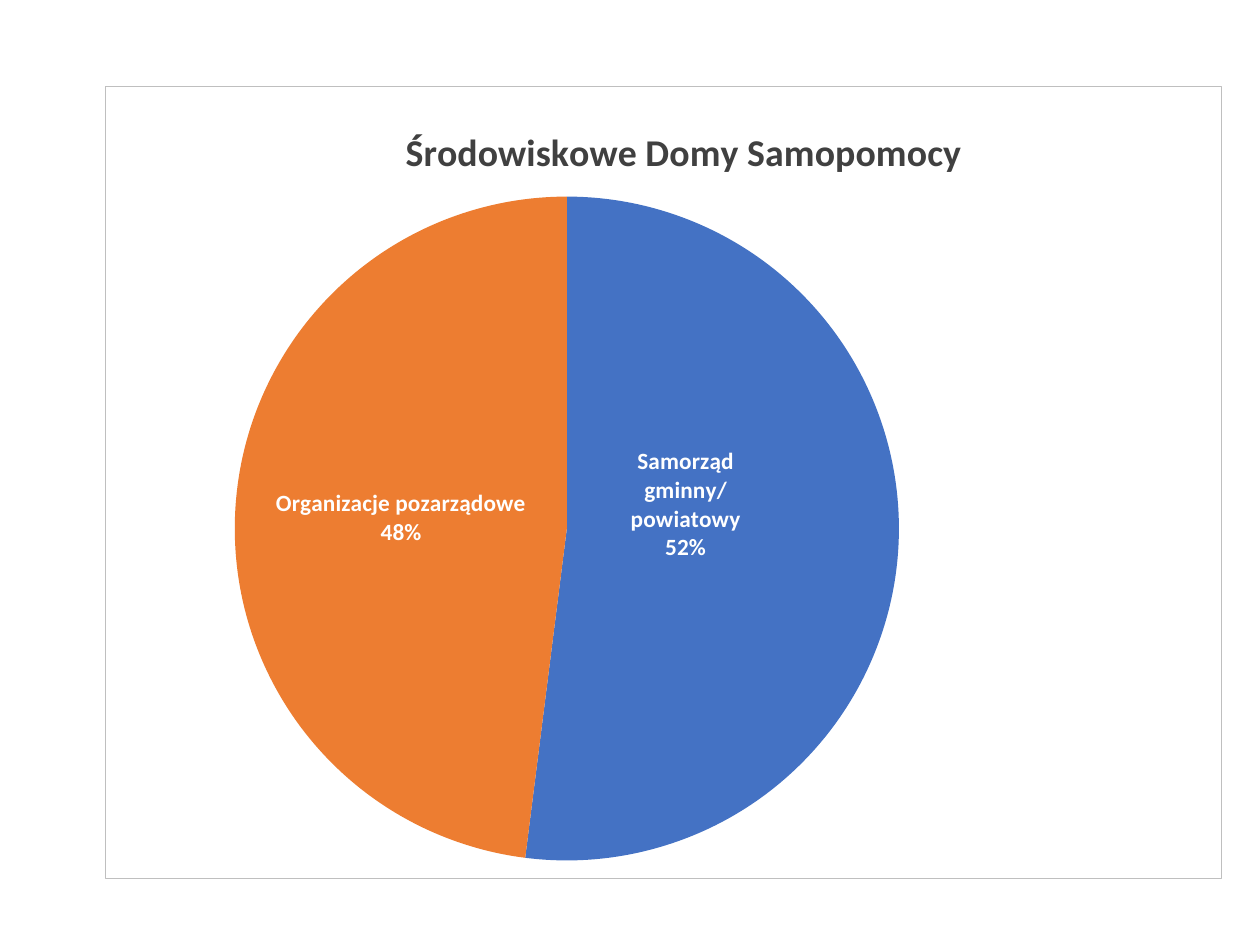
from dataclasses import dataclass

from lxml import etree
from pptx import Presentation
from pptx import util as u
from pptx.chart import data as chart_data
from pptx.dml import color
from pptx.enum import chart as chart_enum
from pptx.oxml import parse_xml
from pptx.oxml.ns import nsdecls, qn


@dataclass(frozen=True)
class Theme:
    font: str = "Calibri"
    title: str = "404040"
    label: str = "FFFFFF"
    text: str = "000000"
    border: str = "BFBFBF"
    title_size: float = 21.6
    label_size: float = 13.3
    base_size: float = 10


@dataclass(frozen=True)
class Sector:
    name: str
    percent: int
    fill: str


THEME = Theme()
SECTORS = [
    Sector("Samorząd gminny/powiatowy", 52, "4472C4"),
    Sector("Organizacje pozarządowe", 48, "ED7D31"),
]


def format_font(font, *, size: float, fill: str, bold: bool = False) -> None:
    font.name = THEME.font
    font.size = u.Pt(size)
    font.bold = bold
    font.color.rgb = color.RGBColor.from_string(fill)


def write_text(frame, content: str, **font_format) -> None:
    paragraph = frame.paragraphs[0]
    run = paragraph.add_run()
    run.text = content
    format_font(run.font, **font_format)


def place(parent, after: str | None, *, target: str = "", edge: bool = True, **values: float) -> None:
    for old in parent.findall(qn("c:layout")):
        parent.remove(old)
    layout = etree.Element(qn("c:layout"))
    manual = etree.SubElement(layout, qn("c:manualLayout"))
    settings = {"layoutTarget": target} if target else {}
    if edge:
        settings |= {"xMode": "edge", "yMode": "edge"}
    for name, value in (settings | values).items():
        etree.SubElement(manual, qn(f"c:{name}")).set("val", str(value))
    if after:
        parent.find(qn(after)).addnext(layout)
    else:
        parent.insert(0, layout)


def add_border(chart) -> None:
    border = parse_xml(
        f'<c:spPr {nsdecls("c", "a")}><a:solidFill><a:srgbClr val="FFFFFF"/></a:solidFill>'
        f'<a:ln w="{u.Pt(0.75)}"><a:solidFill><a:srgbClr val="{THEME.border}"/>'
        "</a:solidFill></a:ln></c:spPr>"
    )
    chart.element.find(qn("c:chart")).addnext(border)


def format_labels(plot) -> None:
    labels = plot.series[0].data_labels
    labels.show_value = False
    labels.show_category_name = True
    labels.show_percentage = True
    labels.position = chart_enum.XL_LABEL_POSITION.CENTER
    format_font(labels.font, size=THEME.label_size, fill=THEME.label, bold=True)


def shift_first_label(series) -> None:
    label = series.points[0].data_label
    label.position = chart_enum.XL_LABEL_POSITION.CENTER
    format_font(label.font, size=THEME.label_size, fill=THEME.label, bold=True)
    element = series.data_labels._element.find(qn("c:dLbl"))
    for name, value in (("showVal", "0"), ("showCatName", "1"), ("showPercent", "1")):
        element.find(qn(f"c:{name}")).set("val", value)
    place(element, "c:idx", edge=False, x=-0.042, y=-0.043)


def add_sector_pie(slide, sectors: list[Sector], title: str) -> None:
    values = chart_data.CategoryChartData()
    values.categories = [sector.name for sector in sectors]
    values.add_series("Series 1", [sector.percent for sector in sectors])
    chart = slide.shapes.add_chart(
        chart_enum.XL_CHART_TYPE.PIE,
        u.Cm(2.11), u.Cm(1.73), u.Cm(22.53), u.Cm(16), values,
    ).chart
    chart.has_legend = False
    format_font(chart.font, size=THEME.base_size, fill=THEME.text)
    add_border(chart)

    write_text(chart.chart_title.text_frame, title,
               size=THEME.title_size, fill=THEME.title, bold=True)
    place(chart.chart_title._element, "c:tx", x=0.263, y=0.04)
    place(chart.element.find(qn("c:chart")).find(qn("c:plotArea")), None,
          target="inner", x=0.116, y=0.139, w=0.595, h=0.838)

    plot = chart.plots[0]
    plot.vary_by_categories = True
    series = plot.series[0]
    for index, sector in enumerate(sectors):
        slice_format = series.points[index].format
        slice_format.fill.solid()
        slice_format.fill.fore_color.rgb = color.RGBColor.from_string(sector.fill)
        slice_format.line.fill.background()
    format_labels(plot)
    shift_first_label(series)


def main() -> None:
    presentation = Presentation()
    presentation.slide_width = u.Cm(25.4)
    presentation.slide_height = u.Cm(19.05)
    slide = presentation.slides.add_slide(presentation.slide_layouts[6])
    add_sector_pie(slide, SECTORS, "Środowiskowe Domy Samopomocy")
    presentation.save("out.pptx")


if __name__ == "__main__":
    main()
